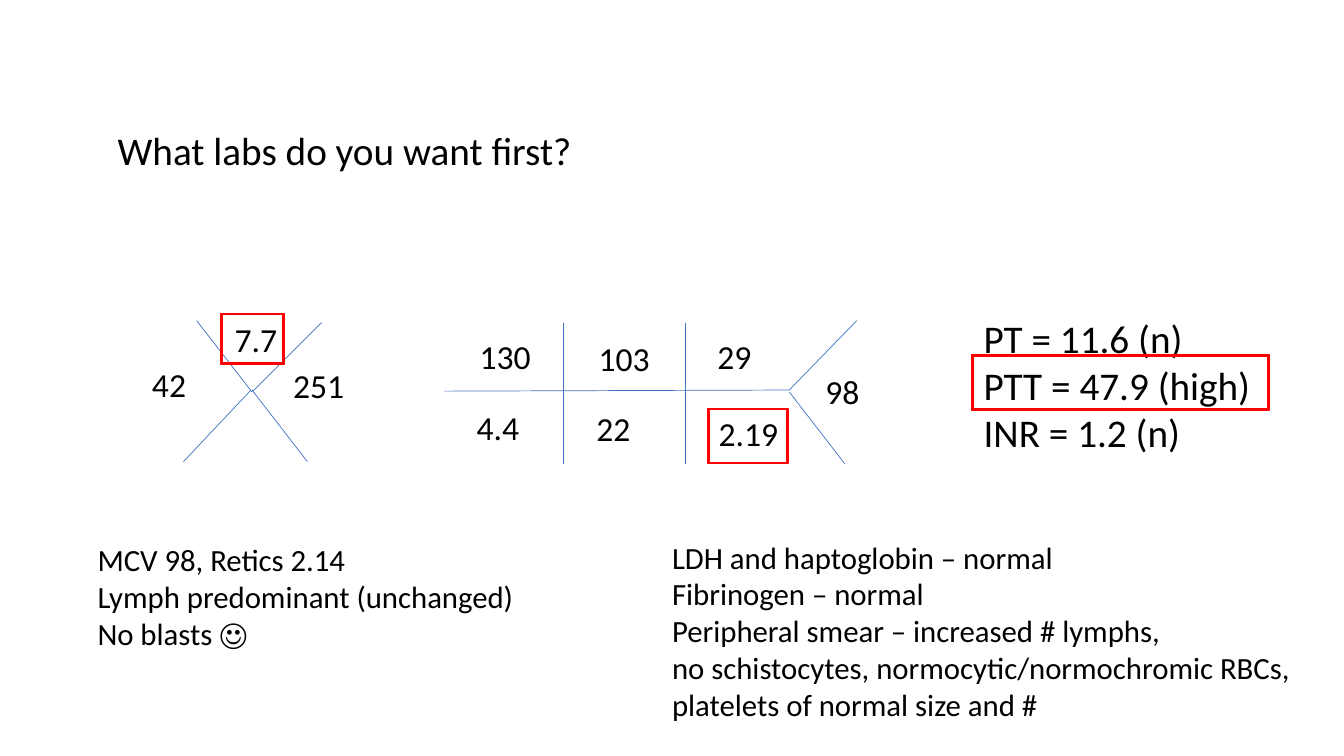
from dataclasses import dataclass

import pptx
import pptx.dml.color
import pptx.enum.shapes
import pptx.enum.text
import pptx.oxml
import pptx.oxml.ns
import pptx.slide
import pptx.util

Pt = pptx.util.Pt
BLACK = pptx.dml.color.RGBColor(0x00, 0x00, 0x00)
BLUE = pptx.dml.color.RGBColor(0x44, 0x72, 0xC4)
RED = pptx.dml.color.RGBColor(0xFF, 0x00, 0x00)
FONT = "Calibri"
VALUE_SIZE = 24
VALUE_HEIGHT = 36


@dataclass(frozen=True)
class Stroke:
    x1: float
    y1: float
    x2: float
    y2: float


@dataclass(frozen=True)
class Note:
    left: float
    top: float
    width: float
    height: float
    size: float
    lines: tuple[str, ...]
    wrap: bool = False


@dataclass(frozen=True)
class Highlight:
    left: float
    top: float
    width: float
    height: float


def lab_value(left: float, top: float, width: float, value: str,
              wrap: bool = False) -> Note:
    return Note(left, top, width, VALUE_HEIGHT, VALUE_SIZE, (value,), wrap)


BLOOD_COUNT_CROSS = (
    Stroke(140.4, 229, 180, 280),
    Stroke(229.7, 230.4, 180.7, 279.4),
    Stroke(179.3, 278.6, 131, 329.8),
    Stroke(180, 278.6, 219.6, 329.8),
)
CHEMISTRY_FISHBONE = (
    Stroke(317.5, 279.4, 563.8, 278.6),
    Stroke(612, 229, 563.8, 278.6),
    Stroke(563.8, 280, 603.4, 331.2),
    *(Stroke(x, 230.4, x, 331.2) for x in (402.5, 489.6)),
)
NOTES = (
    Note(695.5, 221, 207.4, 108.7, 28,
         ("PT = 11.6 (n)", "PTT = 47.9 (high)", "INR = 1.2 (n)")),
    Note(77, 86.4, 357.1, 41, 28, ("What labs do you want first?",), wrap=True),
    Note(473, 380.9, 465.8, 140.4, 22,
         ("LDH and haptoglobin – normal",
          "Fibrinogen – normal",
          "Peripheral smear – increased # lymphs,",
          "no schistocytes, normocytic/normochromic RBCs,",
          "platelets of normal size and #")),
    Note(62.6, 383, 314.6, 87.1, 22,
         ("MCV 98, Retics 2.14", "Lymph predominant (unchanged)", "No blasts ☺")),
)
LAB_VALUES = (
    lab_value(160.6, 224.6, 88.6, "7.7", wrap=True),
    lab_value(101.5, 256.3, 38.9, "42"),
    lab_value(202.3, 257, 51.1, "251"),
    lab_value(335.5, 236.2, 51.1, "130"),
    lab_value(420.5, 237.6, 51.1, "103"),
    lab_value(505.4, 236.2, 38.9, "29"),
    lab_value(333.4, 287.3, 45.4, "4.4"),
    lab_value(419, 288, 38.9, "22"),
    lab_value(506.2, 291.6, 57.6, "2.19"),
    lab_value(582.5, 261.4, 38.9, "98"),
)
ABNORMAL_RESULTS = (
    Highlight(505.4, 291.6, 57.6, 39.6),
    Highlight(157.7, 223.9, 45.4, 36),
    Highlight(694.1, 253.4, 212.4, 39.6),
)


def draw_stroke(slide: pptx.slide.Slide, stroke: Stroke) -> None:
    line = slide.shapes.add_connector(
        pptx.enum.shapes.MSO_CONNECTOR.STRAIGHT,
        Pt(stroke.x1), Pt(stroke.y1), Pt(stroke.x2), Pt(stroke.y2))
    line.line.color.rgb = BLUE
    line.line.width = Pt(0.5)
    properties = line._element.spPr
    properties.append(pptx.oxml.parse_xml(
        f"<a:effectLst {pptx.oxml.ns.nsdecls('a')}/>"))


def draw_note(slide: pptx.slide.Slide, note: Note) -> None:
    box = slide.shapes.add_textbox(
        Pt(note.left), Pt(note.top), Pt(note.width), Pt(note.height))
    frame = box.text_frame
    frame.word_wrap = note.wrap
    frame.auto_size = pptx.enum.text.MSO_AUTO_SIZE.SHAPE_TO_FIT_TEXT
    for index, text in enumerate(note.lines):
        paragraph = frame.add_paragraph() if index else frame.paragraphs[0]
        run = paragraph.add_run()
        run.text = text
        run.font.name = FONT
        run.font.size = Pt(note.size)
        run.font.color.rgb = BLACK


def draw_highlight(slide: pptx.slide.Slide, highlight: Highlight) -> None:
    border = slide.shapes.add_shape(
        pptx.enum.shapes.MSO_SHAPE.FRAME,
        Pt(highlight.left), Pt(highlight.top),
        Pt(highlight.width), Pt(highlight.height))
    border.adjustments[0] = 0.026
    border.shadow.inherit = False
    border.fill.solid()
    border.fill.fore_color.rgb = RED
    border.line.color.rgb = RED
    border.line.width = Pt(1)


def main() -> None:
    deck = pptx.Presentation()
    deck.slide_width = Pt(960)
    deck.slide_height = Pt(540)
    slide = deck.slides.add_slide(deck.slide_layouts[6])
    for stroke in BLOOD_COUNT_CROSS + CHEMISTRY_FISHBONE:
        draw_stroke(slide, stroke)
    for note in NOTES + LAB_VALUES:
        draw_note(slide, note)
    for highlight in ABNORMAL_RESULTS:
        draw_highlight(slide, highlight)
    deck.save("out.pptx")


if __name__ == "__main__":
    main()
